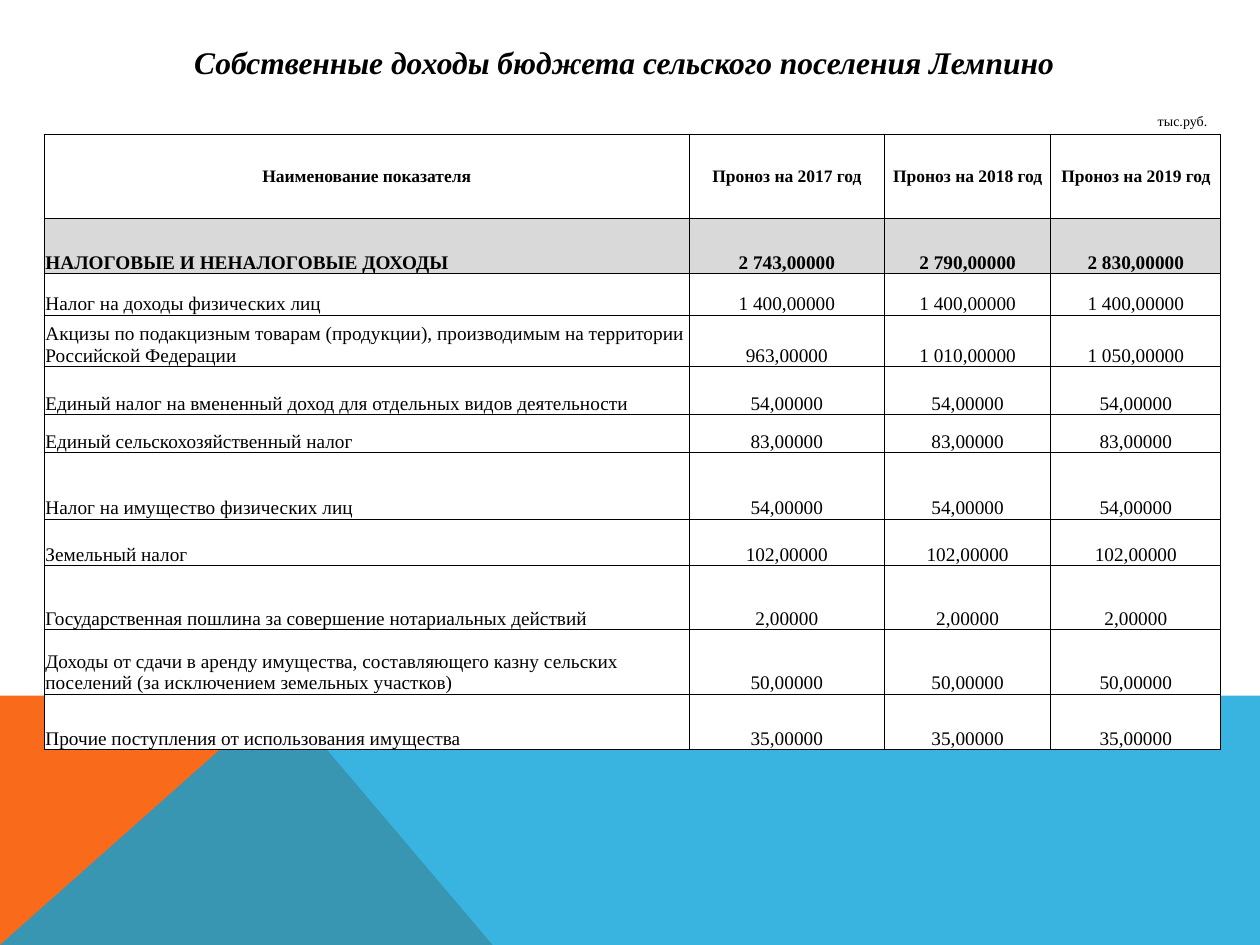
from lxml.etree import SubElement
from pptx import Presentation
from pptx.dml.color import RGBColor
from pptx.enum.text import MSO_ANCHOR, MSO_AUTO_SIZE, PP_ALIGN
from pptx.oxml.ns import qn
from pptx.util import Inches, Pt

COLORS = {
    "text": "000000",
    "grid": "000000",
    "plain": "FFFFFF",
    "total": "D9D9D9",
    "orange": "F96A1B",
    "blue": "08A1D9",
}
FONT = "Times New Roman"
WIDTHS = [5.12, 1.55, 1.32, 1.35]
HEIGHTS = [0.66, 0.44, 0.33, 0.41, 0.38, 0.3, 0.53, 0.37, 0.51, 0.51, 0.44]
ROWS = [
    ("Наименование показателя", "Проноз на 2017 год", "Проноз на 2018 год", "Проноз на 2019 год"),
    ("НАЛОГОВЫЕ И НЕНАЛОГОВЫЕ ДОХОДЫ", "2 743,00000", "2 790,00000", "2 830,00000"),
    ("Налог на доходы физических лиц", "1 400,00000", "1 400,00000", "1 400,00000"),
    ("Акцизы по подакцизным товарам (продукции), производимым на территории "
     "Российской Федерации", "963,00000", "1 010,00000", "1 050,00000"),
    ("Единый налог на вмененный доход для отдельных видов деятельности",
     "54,00000", "54,00000", "54,00000"),
    ("Единый сельскохозяйственный налог", "83,00000", "83,00000", "83,00000"),
    ("Налог на имущество физических лиц", "54,00000", "54,00000", "54,00000"),
    ("Земельный налог", "102,00000", "102,00000", "102,00000"),
    ("Государственная пошлина за совершение нотариальных действий",
     "2,00000", "2,00000", "2,00000"),
    ("Доходы от сдачи в аренду имущества, составляющего казну сельских поселений "
     "(за исключением земельных участков)", "50,00000", "50,00000", "50,00000"),
    ("Прочие поступления от использования имущества", "35,00000", "35,00000", "35,00000"),
]


def paint(fill, name):
    fill.solid()
    fill.fore_color.rgb = RGBColor.from_string(COLORS[name])


def write(frame, text, size, align=PP_ALIGN.LEFT, bold=False, italic=False):
    frame.text = text
    line = frame.paragraphs[0]
    line.alignment = align
    font = line.font
    font.name, font.size = FONT, Pt(size)
    font.bold, font.italic = bold, italic
    font.color.rgb = RGBColor.from_string(COLORS["text"])


def add_band(slide, points, color, alpha=None):
    """Draw a filled outline; alpha is its opacity in percent."""
    spots = [(Inches(x), Inches(y)) for x, y in points]
    pen = slide.shapes.build_freeform(*spots[0])
    pen.add_line_segments(spots[1:], close=True)
    band = pen.convert_to_shape()
    band.shadow.inherit = False
    band.line.fill.background()
    paint(band.fill, color)
    if alpha:
        tone = band.fill._xPr.find(".//" + qn("a:srgbClr"))
        SubElement(tone, qn("a:alpha"), val=str(alpha * 1000))


def set_title(slide, text):
    title = slide.shapes.title
    title.left, title.top = Inches(0.35), Inches(0.29)
    title.width, title.height = Inches(9.21), Inches(0.4)
    frame = title.text_frame
    frame.auto_size = MSO_AUTO_SIZE.NONE
    frame.vertical_anchor = MSO_ANCHOR.MIDDLE
    write(frame, text, 18, PP_ALIGN.CENTER, bold=True, italic=True)


def add_unit(slide, text):
    box = slide.shapes.add_textbox(Inches(9.09), Inches(0.84), Inches(0.6), Inches(0.24))
    box.text_frame.word_wrap = False
    write(box.text_frame, text, 8)


def add_edges(cell):
    props = cell._tc.get_or_add_tcPr()
    for spot, side in enumerate(("a:lnL", "a:lnR", "a:lnT", "a:lnB")):
        edge = props.makeelement(qn(side), w=str(Pt(0.5)))
        ink = SubElement(edge, qn("a:solidFill"))
        SubElement(ink, qn("a:srgbClr"), val=COLORS["grid"])
        props.insert(spot, edge)


def fill_cell(cell, text, row, col):
    head, total = row == 0, row == 1
    cell.margin_left = cell.margin_right = cell.margin_top = Inches(0.01)
    cell.margin_bottom = 0
    cell.vertical_anchor = MSO_ANCHOR.MIDDLE if head else MSO_ANCHOR.BOTTOM
    align = PP_ALIGN.CENTER if head or col else PP_ALIGN.LEFT
    write(cell.text_frame, text, 10 if head else 11, align, bold=head or total)
    paint(cell.fill, "total" if total else "plain")
    add_edges(cell)


def add_grid(slide):
    frame = slide.shapes.add_table(
        len(ROWS), len(WIDTHS), Inches(0.35), Inches(1.07),
        Inches(sum(WIDTHS)), Inches(sum(HEIGHTS)))
    table = frame.table
    table.first_row = table.horz_banding = False
    for col, width in zip(table.columns, WIDTHS):
        col.width = Inches(width)
    for row, height in zip(table.rows, HEIGHTS):
        row.height = Inches(height)
    for row, texts in enumerate(ROWS):
        for col, text in enumerate(texts):
            fill_cell(table.cell(row, col), text, row, col)


def main():
    deck = Presentation()
    deck.slide_width, deck.slide_height = Inches(10), Inches(7.5)
    slide = deck.slides.add_slide(deck.slide_layouts[5])
    add_band(slide, [(0, 7.5), (0, 5.52), (2.23, 5.52), (3.91, 7.5)], "orange")
    add_band(slide, [(0, 7.5), (2.23, 5.52), (10, 5.52), (10, 7.5)], "blue", 80)
    set_title(slide, "Собственные доходы бюджета сельского поселения Лемпино")
    add_unit(slide, "тыс.руб.")
    add_grid(slide)
    deck.save("out.pptx")


if __name__ == "__main__":
    main()
